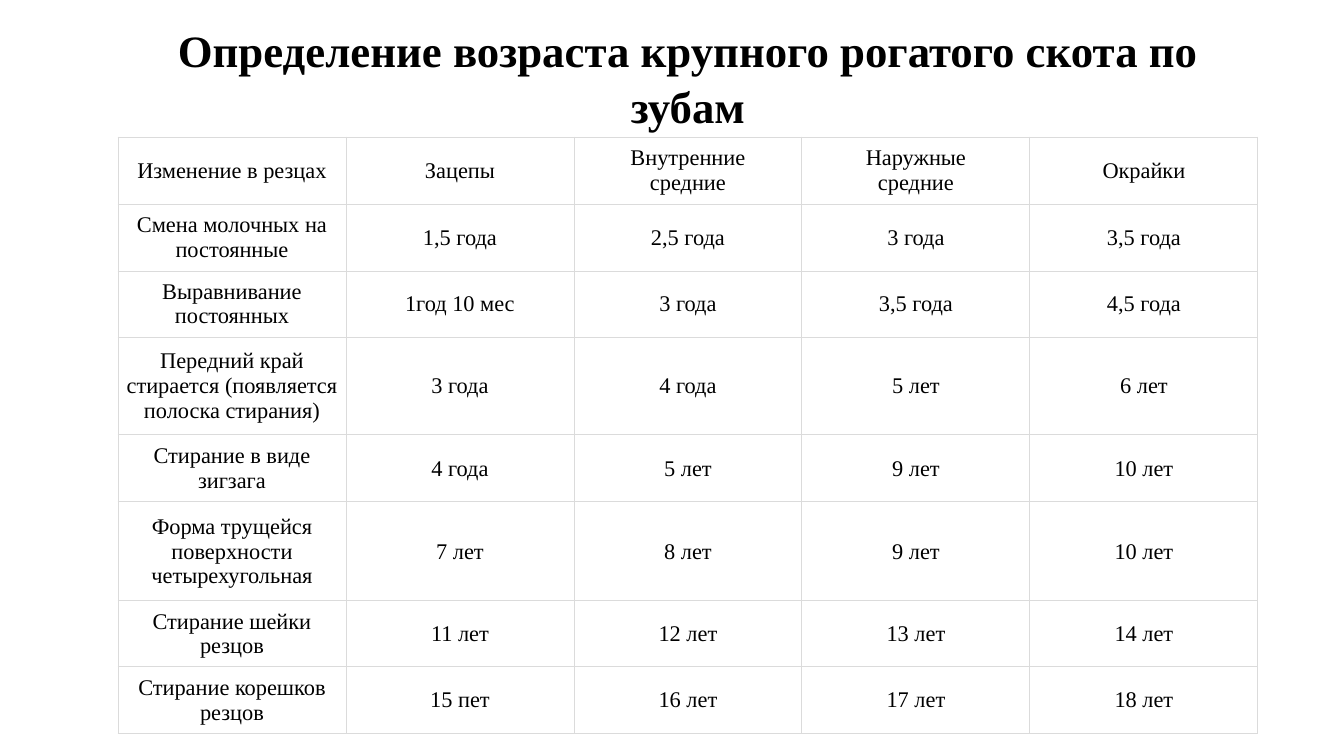
"""Build a slide with a table for telling the age of cattle by their teeth."""
from lxml.etree import SubElement
from pptx import Presentation
from pptx.dml.color import RGBColor
from pptx.enum.text import MSO_ANCHOR as Anchor, PP_ALIGN as Align
from pptx.oxml.ns import qn
from pptx.util import Pt

THEME = {
    "font": "Times New Roman",
    "ink": "000000",
    "paper": "FFFFFF",
    "rule": "DBDBDB",
    "rule_width": 0.75,
    "title_size": 32,
    "cell_size": 16,
}
SCALE = 914400 / 100.8
LEFT, COLUMN_WIDTH = 118, 228
ROWS = [
    (67, ["Изменение в резцах", "Зацепы", "Внутренние\nсредние", "Наружные\nсредние", "Окрайки"]),
    (67, ["Смена молочных на постоянные", "1,5 года", "2,5 года", "3 года", "3,5 года"]),
    (66, ["Выравнивание\nпостоянных", "1год 10 мес", "3 года", "3,5 года", "4,5 года"]),
    (98, ["Передний край стирается (появляется полоска стирания)", "3 года", "4 года", "5 лет", "6 лет"]),
    (67, ["Стирание в виде зигзага", "4 года", "5 лет", "9 лет", "10 лет"]),
    (99, ["Форма трущейся поверхности четырехугольная", "7 лет", "8 лет", "9 лет", "10 лет"]),
    (66, ["Стирание шейки резцов", "11 лет", "12 лет", "13 лет", "14 лет"]),
    (67, ["Стирание корешков резцов", "15 пет", "16 лет", "17 лет", "18 лет"]),
]
COLUMN_COUNT = len(ROWS[0][1])
TABLE_WIDTH = COLUMN_COUNT * COLUMN_WIDTH


def px(length):
    return round(length * SCALE)


def write(frame, text, size, bold=False):
    frame.text = text
    for para in frame.paragraphs:
        para.alignment = Align.CENTER
        for span in para.runs:
            span.font.name = THEME["font"]
            span.font.size = Pt(size)
            span.font.bold = bold
            span.font.color.rgb = RGBColor.from_string(THEME["ink"])


deck = Presentation()
deck.slide_width, deck.slide_height = px(1344), px(756)
page = deck.slides.add_slide(deck.slide_layouts[6])
page.background.fill.solid()
page.background.fill.fore_color.rgb = RGBColor.from_string(THEME["paper"])

table_height = sum(height for height, texts in ROWS)
table = page.shapes.add_table(
    len(ROWS), COLUMN_COUNT, px(LEFT), px(137), px(TABLE_WIDTH), px(table_height)
).table
table.first_row = table.horz_banding = False
for column in table.columns:
    column.width = px(COLUMN_WIDTH)

for row, (height, texts) in zip(table.rows, ROWS):
    row.height = px(height)
    for cell, text in zip(row.cells, texts):
        write(cell.text_frame, text, THEME["cell_size"])
        cell.vertical_anchor = Anchor.MIDDLE
        cell.margin_left = cell.margin_right = px(5)
        cell.margin_top = cell.margin_bottom = px(5)
        properties = cell._tc.get_or_add_tcPr()
        for side in ("lnL", "lnR", "lnT", "lnB"):
            border = SubElement(properties, qn(f"a:{side}"), w=str(Pt(THEME["rule_width"])))
            SubElement(SubElement(border, qn("a:solidFill")), qn("a:srgbClr"), val=THEME["rule"])
        cell.fill.solid()
        cell.fill.fore_color.rgb = RGBColor.from_string(THEME["paper"])

title = page.shapes.add_textbox(px(LEFT), px(18), px(TABLE_WIDTH), px(119))
title.text_frame.word_wrap = True
title.text_frame.vertical_anchor = Anchor.BOTTOM
write(
    title.text_frame,
    "Определение возраста крупного рогатого скота по зубам",
    THEME["title_size"],
    bold=True,
)
title.text_frame.paragraphs[0].line_spacing = 1.03

deck.save("out.pptx")
